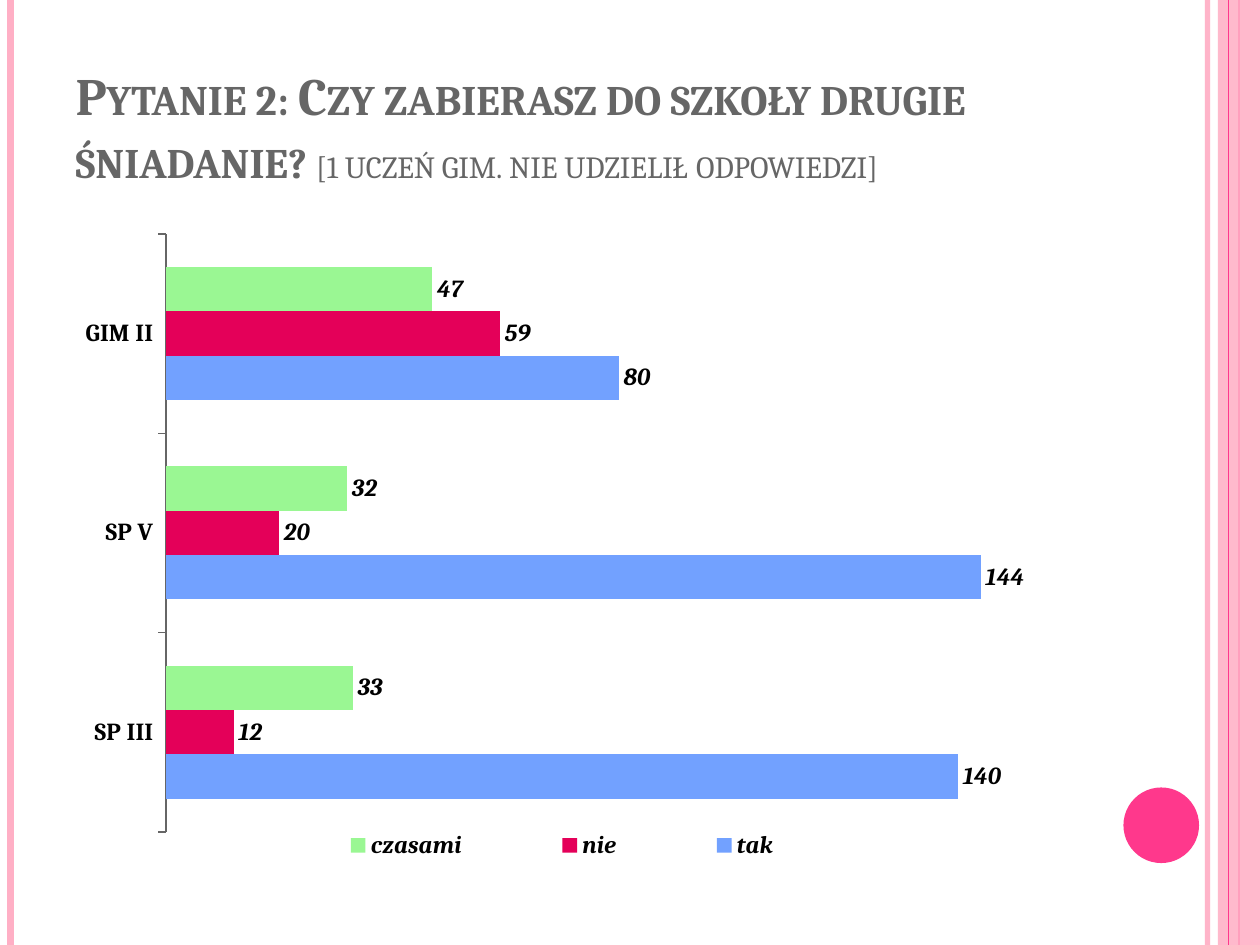
from dataclasses import dataclass

from lxml import etree
from pptx import Presentation
from pptx.chart.data import CategoryChartData
from pptx.dml.color import RGBColor
from pptx.enum.chart import XL_CHART_TYPE, XL_LABEL_POSITION, XL_LEGEND_POSITION, XL_TICK_MARK
from pptx.enum.shapes import MSO_CONNECTOR, MSO_SHAPE
from pptx.enum.text import MSO_ANCHOR, MSO_AUTO_SIZE, PP_ALIGN
from pptx.oxml import parse_xml
from pptx.oxml.ns import qn
from pptx.util import Pt

BAR = XL_CHART_TYPE.BAR_CLUSTERED
OUTSIDE_END = XL_LABEL_POSITION.OUTSIDE_END
BOTTOM = XL_LEGEND_POSITION.BOTTOM
TICK_OUT = XL_TICK_MARK.OUTSIDE
STRAIGHT = MSO_CONNECTOR.STRAIGHT
RECT = MSO_SHAPE.RECTANGLE
OVAL = MSO_SHAPE.OVAL


@dataclass(frozen=True)
class Theme:
    font: str = "Cambria"
    chart_font: str = "TeX Gyre Schola"
    pale: RGBColor = RGBColor(0xFF, 0xAF, 0xC5)
    pink: RGBColor = RGBColor(0xFF, 0x38, 0x8C)
    title: RGBColor = RGBColor(0x66, 0x66, 0x66)
    text: RGBColor = RGBColor(0, 0, 0)
    axis: RGBColor = RGBColor(0x66, 0x66, 0x66)
    yes: RGBColor = RGBColor(0x72, 0xA1, 0xFF)
    no: RGBColor = RGBColor(0xE4, 0x00, 0x59)
    sometimes: RGBColor = RGBColor(0x9A, 0xF7, 0x93)
    title_size: int = 30
    note_size: int = 22
    label_size: int = 14
    chart_size: int = 10


def set_alpha(element, percent):
    color = next(element.iter(qn("a:srgbClr")))
    etree.SubElement(color, qn("a:alpha")).set("val", str(percent * 1000))


def manual_layout(x, y, w, h, inner=False):
    target = '<c:layoutTarget val="inner"/>' if inner else ""
    return parse_xml(
        '<c:layout xmlns:c="http://schemas.openxmlformats.org/drawingml/2006/chart">'
        f'<c:manualLayout>{target}<c:xMode val="edge"/><c:yMode val="edge"/>'
        f'<c:x val="{x}"/><c:y val="{y}"/><c:w val="{w}"/><c:h val="{h}"/>'
        "</c:manualLayout></c:layout>"
    )


theme = Theme()
prs = Presentation()
prs.slide_width, prs.slide_height = Pt(720), Pt(540)
s = prs.slides.add_slide(prs.slide_layouts[5])

stripes = [
    (690, theme.pale, 3, 93),
    (6, theme.pale, 4.5, 100),
    (708, theme.pink, 1.5, 100),
    (702, theme.pink, 0.75, 100),
]
panels = [
    (RECT, 696, 0, 24, 540, theme.pale, 87),
    (OVAL, 642, 450, 43.2, 43.2, theme.pink, 100),
]
for i, (x, color, width, alpha) in enumerate(stripes):
    if i == 3:
        for kind, left, top, w, h, fill, fill_alpha in panels:
            sp = s.shapes.add_shape(kind, Pt(left), Pt(top), Pt(w), Pt(h))
            sp.shadow.inherit = False
            sp.fill.solid()
            sp.fill.fore_color.rgb = fill
            sp.line.fill.background()
            if fill_alpha < 100:
                set_alpha(sp.element.spPr, fill_alpha)
    line = s.shapes.add_connector(STRAIGHT, Pt(x), Pt(0), Pt(x), Pt(540))
    line.line.color.rgb = color
    line.line.width = Pt(width)
    if alpha < 100:
        set_alpha(line.element.spPr, alpha)
    etree.SubElement(line.element.spPr, qn("a:effectLst"))

title = s.shapes.title
title.left, title.top, title.width, title.height = Pt(36), Pt(21.6), Pt(588), Pt(90)
tf = title.text_frame
tf.word_wrap = True
tf.auto_size = MSO_AUTO_SIZE.NONE
tf.vertical_anchor = MSO_ANCHOR.BOTTOM
p = tf.paragraphs[0]
p.alignment = PP_ALIGN.LEFT
p.font.name = theme.font
p.font.color.rgb = theme.title
for text, size, bold in [
    ("Pytanie 2: Czy zabierasz do szkoły drugie śniadanie? ", theme.title_size, True),
    ("[1 uczeń gim. nie udzielił odpowiedzi]", theme.note_size, False),
]:
    r = p.add_run()
    r.text = text
    r.font.size = Pt(size)
    r.font.bold = bold
    r.font.name = theme.font
    r.font.color.rgb = theme.title
    r._r.get_or_add_rPr().set("cap", "small")

answers = [
    ("tak", (140, 144, 80), theme.yes),
    ("nie", (12, 20, 59), theme.no),
    ("czasami", (33, 32, 47), theme.sometimes),
]
data = CategoryChartData()
data.categories = ["SP III", "SP V", "GIM II"]
for name, values, color in answers:
    data.add_series(name, values)
chart = s.shapes.add_chart(BAR, Pt(36), Pt(126), Pt(588), Pt(384), data).chart
chart.has_title = False
chart.font.name = theme.chart_font
chart.font.size = Pt(theme.chart_size)
chart.font.color.rgb = theme.text

plot = chart.plots[0]
plot.gap_width = 150
plot.vary_by_categories = False
chart.has_legend = True
legend = chart.legend
legend.position = BOTTOM
legend.include_in_layout = False
fonts = [(chart.category_axis.tick_labels.font, False), (legend.font, True)]
for series, (name, values, color) in zip(plot.series, answers):
    series.format.fill.solid()
    series.format.fill.fore_color.rgb = color
    labels = series.data_labels
    labels.show_value = True
    labels.position = OUTSIDE_END
    fonts.append((labels.font, True))
for font, italic in fonts:
    font.name = theme.font
    font.size = Pt(theme.label_size)
    font.bold = True
    font.italic = italic
    font.color.rgb = theme.text

cat_axis = chart.category_axis
cat_axis.major_tick_mark = TICK_OUT
cat_axis.format.line.color.rgb = theme.axis
cat_axis.format.line.width = Pt(0.75)
val_axis = chart.value_axis
val_axis.minimum_scale, val_axis.maximum_scale = 0, 160
val_axis.has_major_gridlines = False
val_axis.visible = False

plot_area = chart.element.chart.plotArea
for layout in plot_area.findall(qn("c:layout")):
    plot_area.remove(layout)
plot_area.insert(0, manual_layout(0.1, 0.02, 0.88, 0.89, inner=True))
legend_pos = legend._element.find(qn("c:legendPos"))
legend_pos.addnext(manual_layout(0.19, 0.9, 0.59, 0.06))

prs.save("out.pptx")
